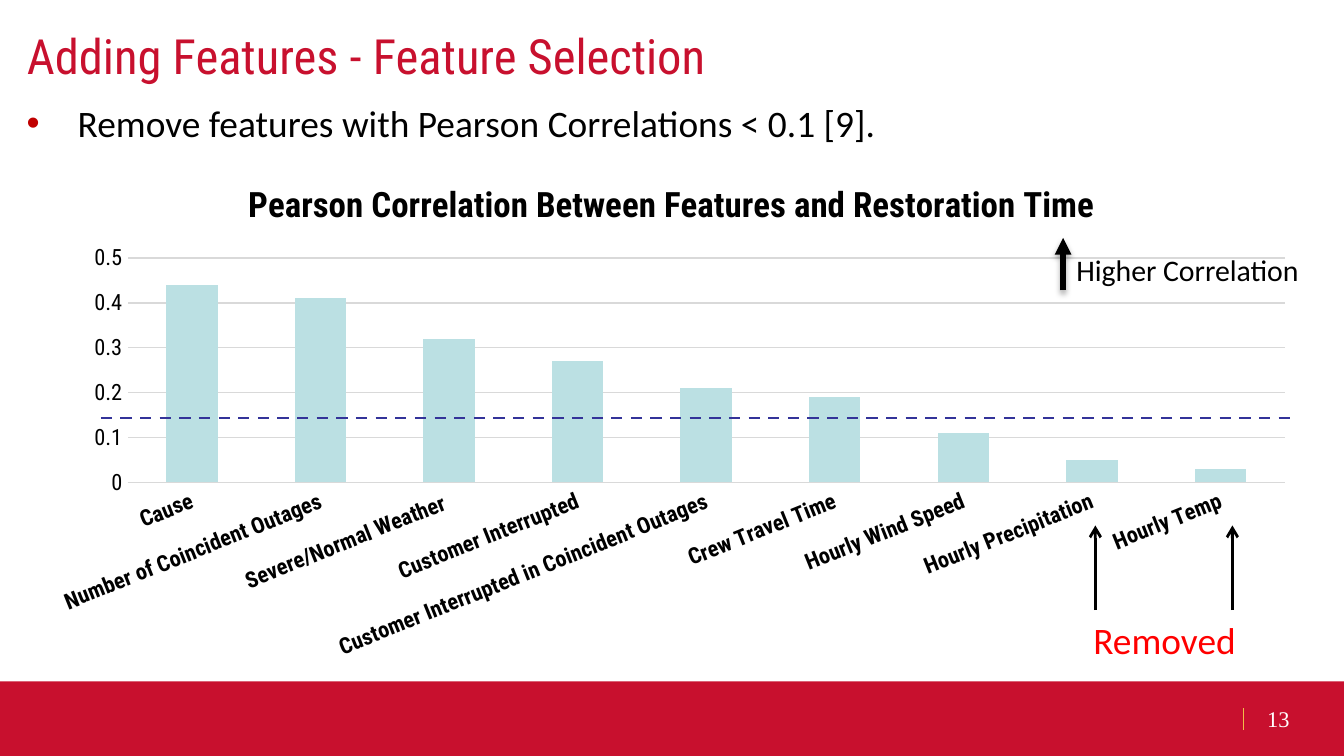
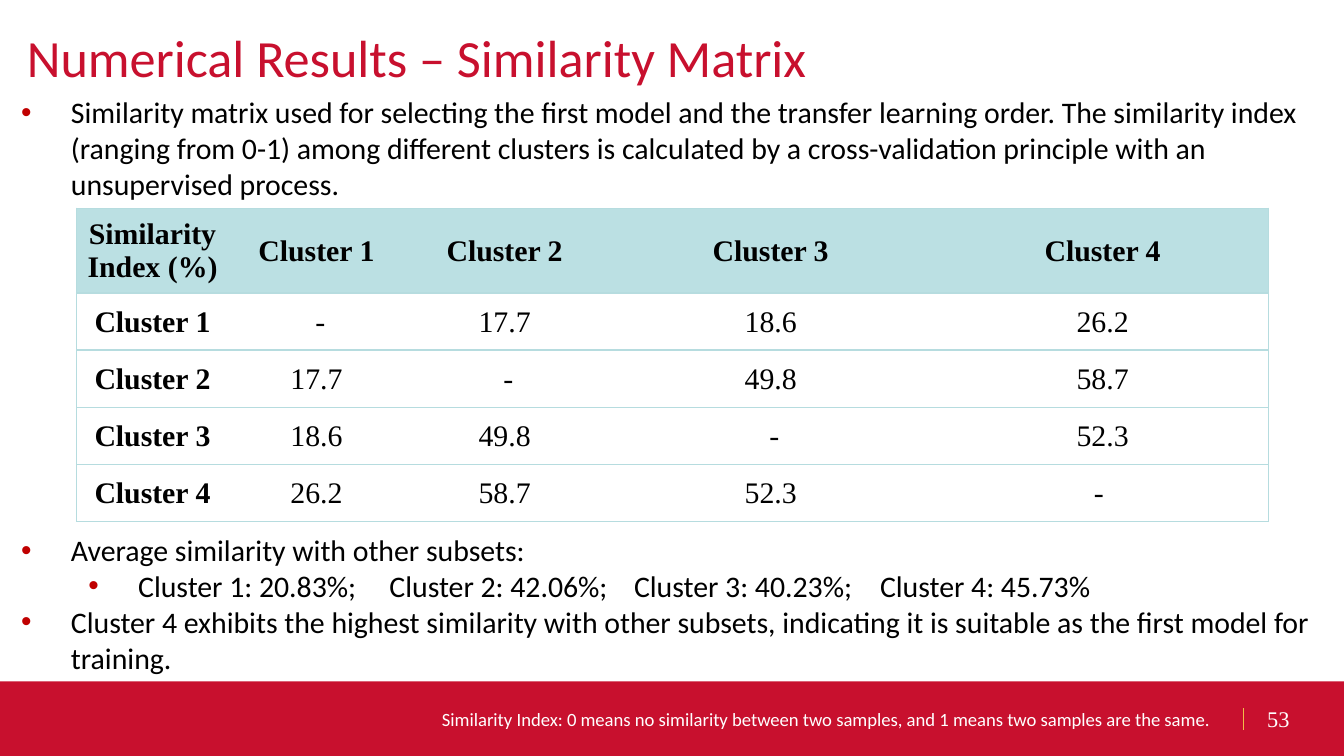
"""Build two slides on feature selection and cluster similarity."""
from dataclasses import dataclass

from lxml import etree
from pptx import Presentation
from pptx.chart.data import CategoryChartData
from pptx.dml.color import RGBColor
from pptx.enum.chart import XL_CHART_TYPE, XL_TICK_MARK
from pptx.enum.dml import MSO_LINE
from pptx.enum.shapes import MSO_CONNECTOR, MSO_SHAPE
from pptx.enum.text import MSO_ANCHOR, PP_ALIGN
from pptx.oxml.ns import qn
from pptx.slide import Slide
from pptx.util import Inches, Pt

COLUMN = XL_CHART_TYPE.COLUMN_CLUSTERED
NO_TICK = XL_TICK_MARK.NONE
DASH = MSO_LINE.DASH
STRAIGHT = MSO_CONNECTOR.STRAIGHT
RECT = MSO_SHAPE.RECTANGLE
TOP, MIDDLE = MSO_ANCHOR.TOP, MSO_ANCHOR.MIDDLE
LEFT, CENTER = PP_ALIGN.LEFT, PP_ALIGN.CENTER


@dataclass(frozen=True)
class Theme:
    red: str = "C8102E"
    gold: str = "F1BE48"
    white: str = "FFFFFF"
    black: str = "000000"
    alert: str = "FF0000"
    bullet: str = "C00000"
    navy: str = "333399"
    aqua: str = "BBE0E3"
    edge: str = "B6DCDF"
    grid: str = "D9D9D9"
    sans: str = "Calibri"
    narrow: str = "Roboto Condensed"
    serif: str = "Times New Roman"
    head: float = 28
    slim: float = 26
    large: float = 20
    chart: float = 18.7
    body: float = 16
    small: float = 12
    note: float = 10


T = Theme()


@dataclass(frozen=True)
class Para:
    text: str
    indent: float = 0
    hang: float = 0
    level: int = 0
    tabs: tuple[float, ...] = ()


@dataclass(frozen=True)
class Label:
    box: tuple[float, float, float, float]
    paras: tuple[Para, ...]
    size: float = T.body
    color: str = T.black
    face: str = T.sans
    align: PP_ALIGN = LEFT
    anchor: MSO_ANCHOR = TOP


@dataclass(frozen=True)
class Rule:
    start: tuple[float, float]
    end: tuple[float, float]
    color: str = T.black
    width: float = 1.5
    tip: str = ""
    dashed: bool = False
    shadow: bool = False


CHART = (0.25, 1.15, 9.49, 3.83)
CORR = {
    "Cause": 0.44,
    "Number of Coincident Outages": 0.41,
    "Severe/Normal Weather ": 0.32,
    "Customer Interrupted": 0.27,
    "Customer Interrupted in Coincident Outages": 0.21,
    "Crew Travel Time": 0.19,
    "Hourly Wind Speed": 0.11,
    "Hourly Precipitation": 0.05,
    "Hourly Temp": 0.03,
}
NAMES = [f"Cluster {n}" for n in range(1, 5)]
SCORES = [
    [" -", "17.7", "18.6", "26.2"],
    ["17.7", " -", "49.8", "58.7"],
    ["18.6", "49.8", " -", "52.3"],
    ["26.2", "58.7", "52.3", "- "],
]
MARKS = (
    Label((0.1, 0.7, 8.11, 0.44),
          (Para("Remove features with Pearson Correlations < 0.1 [9].", 0.38, 0.38),), T.large),
    Label((7.91, 1.82, 1.89, 0.37), (Para("Higher Correlation"),)),
    Label((7.99, 4.54, 1.35, 0.44), (Para("Removed"),), T.large, T.alert, align=CENTER),
)
RULES = (
    Rule((7.91, 2.16), (7.91, 1.77), width=3, tip="triangle", shadow=True),
    *(Rule((x, 4.54), (x, 3.91), tip="arrow") for x in (8.15, 9.17)),
    Rule((0.75, 3.11), (9.65, 3.11), T.navy, dashed=True),
)
NOTES = (
    Label((0.06, 0.65, 9.8, 0.91), (
        Para("Similarity matrix used for selecting the first model and the transfer learning "
             "order. The similarity index (ranging from 0-1) among different clusters is "
             "calculated by a cross-validation principle with an unsupervised process.",
             0.37, 0.37),)),
    Label((0.06, 3.91, 9.84, 1.18), (
        Para("Average similarity with other subsets:", 0.37, 0.37),
        Para("Cluster 1: 20.83%;\tCluster 2: 42.06%;\tCluster 3: 40.23%;\tCluster 4: 45.73%",
             0.87, 0.37, 1, (2.74, 4.56, 6.39)),
        Para("Cluster 4 exhibits the highest similarity with other subsets, indicating it is "
             "suitable as the first model for training.", 0.37, 0.37))),
    Label((3.19, 5.22, 6.4, 0.27), (
        Para("Similarity Index: 0 means no similarity between two samples, and 1 means two "
             "samples are the same."),), T.note, T.white),
)


def rgb(color: str) -> RGBColor:
    return RGBColor.from_string(color)


def add(node, tag: str, **attrs):
    return etree.SubElement(node, qn(tag), {k: str(v) for k, v in attrs.items()})


def style(font, size: float, face: str, color: str = T.black, bold: bool = False) -> None:
    font.size, font.name, font.bold = Pt(size), face, bold
    font.color.rgb = rgb(color)


def place(shape, box: tuple[float, float, float, float]) -> None:
    shape.left, shape.top, shape.width, shape.height = map(Inches, box)


def fill_para(para, item: Para) -> None:
    para.text, para.level = item.text, item.level
    props = para._p.get_or_add_pPr()
    if item.hang:
        props.set("marL", str(Inches(item.indent)))
        props.set("indent", str(-Inches(item.hang)))
        add(add(props, "a:buClr"), "a:srgbClr", val=T.bullet)
        add(props, "a:buFont", typeface="Arial")
        add(props, "a:buChar", char="•")
    if item.tabs:
        stops = add(props, "a:tabLst")
        for pos in item.tabs:
            add(stops, "a:tab", pos=Inches(pos), algn="l")


def add_label(slide: Slide, label: Label) -> None:
    frame = slide.shapes.add_textbox(*map(Inches, label.box)).text_frame
    frame.word_wrap = True
    frame.vertical_anchor = label.anchor
    for num, item in enumerate(label.paras):
        para = frame.add_paragraph() if num else frame.paragraphs[0]
        fill_para(para, item)
        para.alignment = label.align
        style(para.font, label.size, label.face, label.color)


def add_rule(slide: Slide, rule: Rule) -> None:
    line = slide.shapes.add_connector(STRAIGHT, *map(Inches, rule.start + rule.end))
    line.line.color.rgb = rgb(rule.color)
    line.line.width = Pt(rule.width)
    if rule.dashed:
        line.line.dash_style = DASH
    if rule.tip:
        add(line.line._get_or_add_ln(), "a:tailEnd", type=rule.tip)
    effect = add(line._element.spPr, "a:effectLst")
    if rule.shadow:
        cast = add(effect, "a:outerShdw", blurRad=Pt(3.1), dist=Pt(1.8), dir=5400000)
        add(add(cast, "a:srgbClr", val=T.black), "a:alpha", val=35000)


def add_base(deck, title: str, page: int, size: float, face: str) -> Slide:
    slide = deck.slides.add_slide(deck.slide_layouts[5])
    band = slide.shapes.add_shape(RECT, *map(Inches, (0, 5.07, 10, 0.56)))
    band.shadow.inherit = False
    band.fill.solid()
    band.fill.fore_color.rgb = rgb(T.red)
    band.line.fill.background()
    add_rule(slide, Rule((9.25, 5.27), (9.25, 5.43), T.gold, 0.75))
    add_label(slide, Label((9.33, 5.2, 0.58, 0.3), (Para(str(page)),), T.small,
                           T.white, T.serif, anchor=MIDDLE))
    head = slide.shapes.title
    place(head, (0.1, 0.14, 9.49, 0.51))
    head.text_frame.text = title
    head.text_frame.vertical_anchor = TOP
    para = head.text_frame.paragraphs[0]
    para.alignment = LEFT
    style(para.font, size, face, T.red)
    return slide


def set_layout(node, **spots: float) -> None:
    layout = node.find(qn("c:layout"))
    if layout is None:
        layout = etree.Element(qn("c:layout"))
        node.insert(0 if node.find(qn("c:tx")) is None else 1, layout)
    manual = add(layout, "c:manualLayout")
    if "w" in spots:
        add(manual, "c:layoutTarget", val="inner")
    for axis in "xy":
        add(manual, f"c:{axis}Mode", val="edge")
    for key, spot in spots.items():
        add(manual, f"c:{key}", val=spot / CHART[2 if key in "xw" else 3])


def add_bars(slide: Slide) -> None:
    data = CategoryChartData()
    data.categories = list(CORR)
    data.add_series("Series 1", list(CORR.values()))
    chart = slide.shapes.add_chart(COLUMN, *map(Inches, CHART), data).chart
    style(chart.font, T.note, T.narrow)
    chart.has_legend = False
    frame = chart.chart_title.text_frame
    frame.text = "Pearson Correlation Between Features and Restoration Time"
    style(frame.paragraphs[0].font, T.chart, T.narrow, bold=True)
    chart.chart_title.include_in_layout = False
    set_layout(chart.chart_title._element, x=1.55, y=0.15)
    set_layout(chart._chartSpace.chart.plotArea, x=0.7, y=0.77, w=8.61, h=1.67)
    plot = chart.plots[0]
    plot.gap_width, plot.vary_by_categories = 150, False
    bars = plot.series[0].format.fill
    bars.solid()
    bars.fore_color.rgb = rgb(T.aqua)
    cats, vals = chart.category_axis, chart.value_axis
    for axis in (cats, vals):
        axis.major_tick_mark = axis.minor_tick_mark = NO_TICK
        style(axis.tick_labels.font, T.small, T.narrow, bold=axis is cats)
    cats._element.find(qn("c:txPr")).find(qn("a:bodyPr")).set("rot", str(-22 * 60000))
    vals.minimum_scale, vals.maximum_scale, vals.major_unit = 0, 0.5, 0.1
    vals.format.line.fill.background()
    for line in (cats.format.line, vals.major_gridlines.format.line):
        line.color.rgb = rgb(T.grid)
        line.width = Pt(0.75)


def set_edges(cell, drawn: str) -> None:
    props = cell._tc.get_or_add_tcPr()
    for side in "LRTB":
        line = add(props, f"a:ln{side}", w=Pt(0.75))
        if side in drawn:
            add(add(line, "a:solidFill"), "a:srgbClr", val=T.edge)
        else:
            add(line, "a:noFill")


def add_matrix(slide: Slide) -> None:
    rows = [["Similarity Index (%)", *NAMES]]
    rows += [[name, *vals] for name, vals in zip(NAMES, SCORES)]
    high, top = 2.33, 0.63
    spot = map(Inches, (0.57, 1.55, 8.87, high))
    table = slide.shapes.add_table(5, 5, *spot).table
    table.first_row = table.horz_banding = False
    for col, width in zip(table.columns, (1.13, 1.31, 1.49, 2.47, 2.47)):
        col.width = Inches(width)
    for r, row in enumerate(rows):
        table.rows[r].height = Inches((high - top) / len(NAMES) if r else top)
        for c, text in enumerate(row):
            cell = table.cell(r, c)
            set_edges(cell, "TB" + {0: "L", 4: "R"}.get(c, ""))
            cell.fill.solid()
            cell.fill.fore_color.rgb = rgb(T.white if r else T.aqua)
            cell.vertical_anchor = MIDDLE
            cell.margin_left = cell.margin_right = cell.margin_top = Inches(0.01)
            cell.margin_bottom = 0
            cell.text = text
            para = cell.text_frame.paragraphs[0]
            para.alignment = CENTER
            style(para.font, T.body, T.serif, bold=not (r and c))


def main() -> None:
    deck = Presentation()
    deck.slide_width = Inches(10)
    deck.slide_height = deck.slide_width * 9 // 16
    slide = add_base(deck, "Adding Features - Feature Selection", 13, T.slim, T.narrow)
    add_bars(slide)
    for label in MARKS:
        add_label(slide, label)
    for rule in RULES:
        add_rule(slide, rule)
    slide = add_base(deck, "Numerical Results – Similarity Matrix", 53, T.head, T.sans)
    for label in NOTES:
        add_label(slide, label)
    add_matrix(slide)
    deck.save("out.pptx")


if __name__ == "__main__":
    main()
